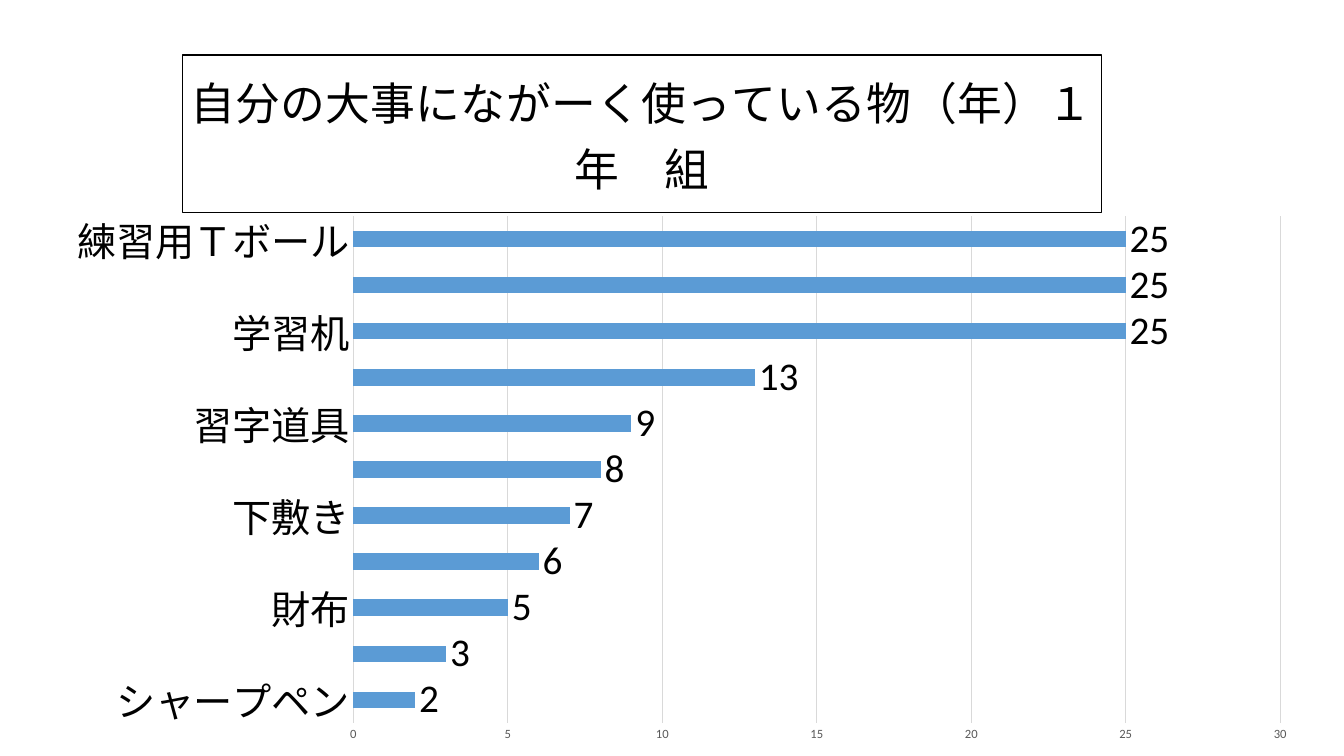
from pptx import Presentation
from pptx.chart.data import CategoryChartData
from pptx.dml.color import RGBColor
from pptx.enum import chart as chart_enum
from pptx.oxml import parse_xml
from pptx.oxml.ns import nsdecls, qn
from pptx.util import Inches, Pt

COLORS = {"bar": "5B9BD5", "text": "000000", "tick": "595959", "grid": "D9D9D9"}
FONT = "Calibri"
TITLE = "自分の大事にながーく使っている物（年）１年　組"
YEARS_USED = {
    "シャープペン": 2, "水筒": 3, "財布": 5, "鉛筆削り": 6,
    "下敷き": 7, "ぬいぐるみ": 8, "習字道具": 9, "クッション": 13,
    "学習机": 25, "ピアノ": 25, "練習用Ｔボール": 25,
}


def color(name):
    return RGBColor.from_string(COLORS[name])


def style_font(font, size, name="text"):
    font.size = Pt(size)
    font.name = FONT
    font.bold = False
    font.color.rgb = color(name)


def style_line(line, name):
    line.color.rgb = color(name)
    line.width = Pt(0.75)


def set_layout(element, position, inner=False):
    """Place a chart part by fractions of the chart: x, y and optionally w, h."""
    for old_layout in element.findall(qn("c:layout")):
        element.remove(old_layout)
    parts = ['<c:layoutTarget val="inner"/>'] if inner else []
    parts += [f'<c:{key}Mode val="edge"/>' for key in "xy"]
    parts += [f'<c:{key} val="{value}"/>' for key, value in position.items()]
    layout = parse_xml(
        f'<c:layout {nsdecls("c")}><c:manualLayout>{"".join(parts)}'
        "</c:manualLayout></c:layout>"
    )
    text = element.find(qn("c:tx"))
    element.insert(0 if text is None else 1, layout)


def add_bar_chart(slide):
    data = CategoryChartData()
    data.categories = list(YEARS_USED)
    data.add_series("Series 1", list(YEARS_USED.values()))
    frame = slide.shapes.add_chart(
        chart_enum.XL_CHART_TYPE.BAR_CLUSTERED,
        Inches(0.52), Inches(0.36), Inches(12.49), Inches(7.14), data,
    )
    chart = frame.chart
    chart.has_legend = False
    style_font(chart.font, 10)
    set_layout(chart._chartSpace.chart.plotArea,
               {"x": 0.239, "y": 0.25, "w": 0.736, "h": 0.704}, inner=True)
    return chart


def style_title(chart):
    title = chart.chart_title
    run = title.text_frame.paragraphs[0].add_run()
    run.text = TITLE
    style_font(run.font, 32)
    style_line(title.format.line, "text")
    set_layout(title._element, {"x": 0.103, "y": 0.026})


def style_bars(chart):
    plot = chart.plots[0]
    plot.gap_width = 182
    plot.vary_by_categories = False
    series = plot.series[0]
    series.format.fill.solid()
    series.format.fill.fore_color.rgb = color("bar")
    labels = series.data_labels
    labels.show_value = True
    labels.position = chart_enum.XL_LABEL_POSITION.OUTSIDE_END
    style_font(labels.font, 28)


def style_axes(chart):
    for axis, size, name in ((chart.category_axis, 28, "text"),
                             (chart.value_axis, 9, "tick")):
        axis.major_tick_mark = chart_enum.XL_TICK_MARK.NONE
        axis.minor_tick_mark = chart_enum.XL_TICK_MARK.NONE
        style_font(axis.tick_labels.font, size, name)
    chart.category_axis.has_major_gridlines = False
    style_line(chart.category_axis.format.line, "grid")

    years = chart.value_axis
    years.minimum_scale, years.maximum_scale, years.major_unit = 0, 30, 5
    years.format.line.fill.background()
    years.has_major_gridlines = True
    style_line(years.major_gridlines.format.line, "grid")


def main():
    presentation = Presentation()
    presentation.slide_width = Inches(13.33)
    presentation.slide_height = Inches(7.5)
    slide = presentation.slides.add_slide(presentation.slide_layouts[6])

    # Bar chart with its framed title
    chart = add_bar_chart(slide)
    style_title(chart)
    style_bars(chart)
    style_axes(chart)

    presentation.save("out.pptx")


if __name__ == "__main__":
    main()
